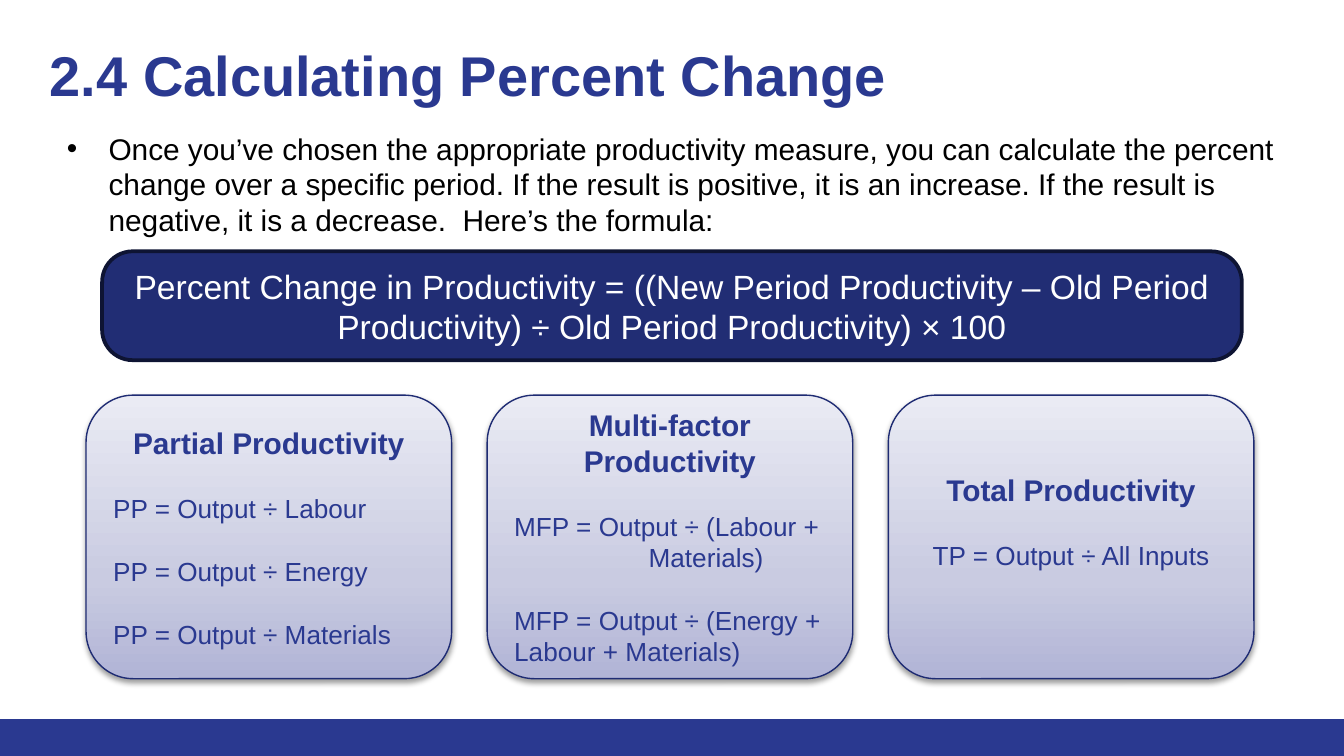
from lxml import etree
from pptx import Presentation
from pptx.dml.color import RGBColor
from pptx.enum import shapes, text
from pptx.oxml import parse_xml
from pptx.oxml.ns import nsdecls, qn
from pptx.util import Inches, Pt

THEME = {
    "font": "Arial",
    "blue": "2A3990", "navy": "212D74", "navy_line": "0E1433", "card_line": "1E2B73",
    "black": "000000", "white": "FFFFFF",
    "card_stops": [(0, "B1B4D6"), (35, "C9CBE1"), (100, "EAEBF4")],
    "title": 30, "formula": 18, "body": 16, "equation": 14, "gap": 17,
}

SLIDE_WIDTH = 10
SLIDE_HEIGHT = SLIDE_WIDTH * 9 / 16
FOOTER_TOP = 5.35
TITLE = "2.4 Calculating Percent Change"
INTRO = ("Once you’ve chosen the appropriate productivity measure, you can calculate "
         "the percent change over a specific period. If the result is positive, it is an "
         "increase. If the result is negative, it is a decrease.  Here’s the formula:")
FORMULA = ("Percent Change in Productivity = ((New Period Productivity – Old Period "
           "Productivity) ÷ Old Period Productivity) × 100")
LEFT, CENTER = text.PP_ALIGN.LEFT, text.PP_ALIGN.CENTER
CARDS = [
    {"heading": "Partial Productivity", "align": LEFT, "bottom": 0.05,
     "equations": ["PP = Output ÷ Labour", "PP = Output ÷ Energy", "PP = Output ÷ Materials"]},
    {"heading": "Multi-factor Productivity", "align": LEFT, "bottom": 0.05,
     "equations": ["MFP = Output ÷ (Labour + \tMaterials)",
                   "MFP = Output ÷ (Energy + Labour + Materials)"]},
    {"heading": "Total Productivity", "align": CENTER, "bottom": 0.28,
     "equations": ["TP = Output ÷ All Inputs"]},
]
CARDS_LEFT, CARDS_RIGHT, CARDS_TOP = 0.64, 9.33, 2.94
CARD_WIDTH, CARD_HEIGHT = 2.72, 2.11


def color(name):
    return RGBColor.from_string(THEME[name])


def write(frame, content, size="body", ink="blue", bold=False, align=LEFT, before=0, new=False):
    """Write one paragraph, in the first paragraph of the frame or in a new one."""
    paragraph = frame.add_paragraph() if new else frame.paragraphs[0]
    paragraph.alignment = align
    paragraph.space_before = Pt(before)
    paragraph._p.get_or_add_pPr().set("defTabSz", str(Inches(1)))
    run = paragraph.add_run()
    run.text = content
    run.font.name = THEME["font"]
    run.font.size = Pt(THEME[size])
    run.font.bold = bold
    run.font.color.rgb = color(ink)
    return paragraph


def add_box(slide, kind, place, line=None, line_width=0, fill=None):
    shape = slide.shapes.add_shape(kind, *map(Inches, place))
    shape.shadow.inherit = False
    if fill:
        shape.fill.solid()
        shape.fill.fore_color.rgb = color(fill)
    if line:
        shape.line.color.rgb = color(line)
        shape.line.width = Pt(line_width)
    else:
        shape.line.fill.background()
    shape.text_frame.word_wrap = True
    shape.text_frame.vertical_anchor = text.MSO_ANCHOR.MIDDLE
    return shape


def add_bullet(paragraph, indent):
    properties = paragraph._p.get_or_add_pPr()
    properties.set("marL", str(Inches(indent)))
    properties.set("indent", str(-Inches(indent)))
    bullet_color = etree.SubElement(properties, qn("a:buClr"))
    etree.SubElement(bullet_color, qn("a:srgbClr"), val=THEME["black"])
    etree.SubElement(properties, qn("a:buFont"), typeface=THEME["font"])
    etree.SubElement(properties, qn("a:buChar"), char="•")


def style_card(shape):
    """Give a card its three-stop gradient and soft shadow."""
    properties = shape._element.spPr
    stops = "".join(f'<a:gs pos="{position * 1000}"><a:srgbClr val="{value}"/></a:gs>'
                    for position, value in THEME["card_stops"])
    gradient = parse_xml(f'<a:gradFill {nsdecls("a")} rotWithShape="1"><a:gsLst>{stops}</a:gsLst>'
                         '<a:lin ang="16200000" scaled="0"/></a:gradFill>')
    properties.find(qn("a:prstGeom")).addnext(gradient)
    shadow = parse_xml(f'<a:outerShdw {nsdecls("a")} blurRad="{Pt(3.1)}" dist="{Pt(1.6)}" '
                       f'dir="5400000" rotWithShape="0"><a:srgbClr val="{THEME["black"]}">'
                       '<a:alpha val="38000"/></a:srgbClr></a:outerShdw>')
    properties.find(qn("a:effectLst")).append(shadow)


def add_title(slide):
    title = slide.shapes.title
    title.left, title.top, title.width, title.height = map(Inches, (0.27, 0.2, 9.2, 0.89))
    frame = title.text_frame
    frame.vertical_anchor = text.MSO_ANCHOR.TOP
    frame.margin_left = frame.margin_right = Inches(0.1)
    frame.margin_top = frame.margin_bottom = Inches(0.1)
    write(frame, TITLE, size="title", bold=True)


def add_intro(slide):
    frame = slide.shapes.add_textbox(*map(Inches, (0.4, 0.92, 9.33, 0.91))).text_frame
    frame.word_wrap = True
    add_bullet(write(frame, INTRO, ink="black"), 0.31)


def add_formula(slide):
    shape = add_box(slide, shapes.MSO_SHAPE.ROUNDED_RECTANGLE, (0.76, 1.87, 8.48, 0.81),
                    line="navy_line", line_width=2, fill="navy")
    shape.adjustments[0] = 0.28
    write(shape.text_frame, FORMULA, size="formula", ink="white", align=CENTER)


def add_cards(slide):
    pitch = (CARDS_RIGHT - CARDS_LEFT - CARD_WIDTH) / (len(CARDS) - 1)
    for index, card in enumerate(CARDS):
        place = (CARDS_LEFT + index * pitch, CARDS_TOP, CARD_WIDTH, CARD_HEIGHT)
        shape = add_box(slide, shapes.MSO_SHAPE.ROUNDED_RECTANGLE, place,
                        line="card_line", line_width=0.75)
        style_card(shape)
        frame = shape.text_frame
        frame.margin_bottom = Inches(card["bottom"])
        write(frame, card["heading"], bold=True, align=CENTER)
        for equation in card["equations"]:
            write(frame, equation, size="equation", align=card["align"],
                  before=THEME["gap"], new=True)


def main():
    presentation = Presentation()
    presentation.slide_width = Inches(SLIDE_WIDTH)
    presentation.slide_height = Inches(SLIDE_HEIGHT)
    slide = presentation.slides.add_slide(presentation.slide_layouts[5])
    add_box(slide, shapes.MSO_SHAPE.RECTANGLE,
            (0, FOOTER_TOP, SLIDE_WIDTH, SLIDE_HEIGHT - FOOTER_TOP), fill="blue")
    add_title(slide)
    add_intro(slide)
    add_formula(slide)
    add_cards(slide)
    presentation.save("out.pptx")


if __name__ == "__main__":
    main()
